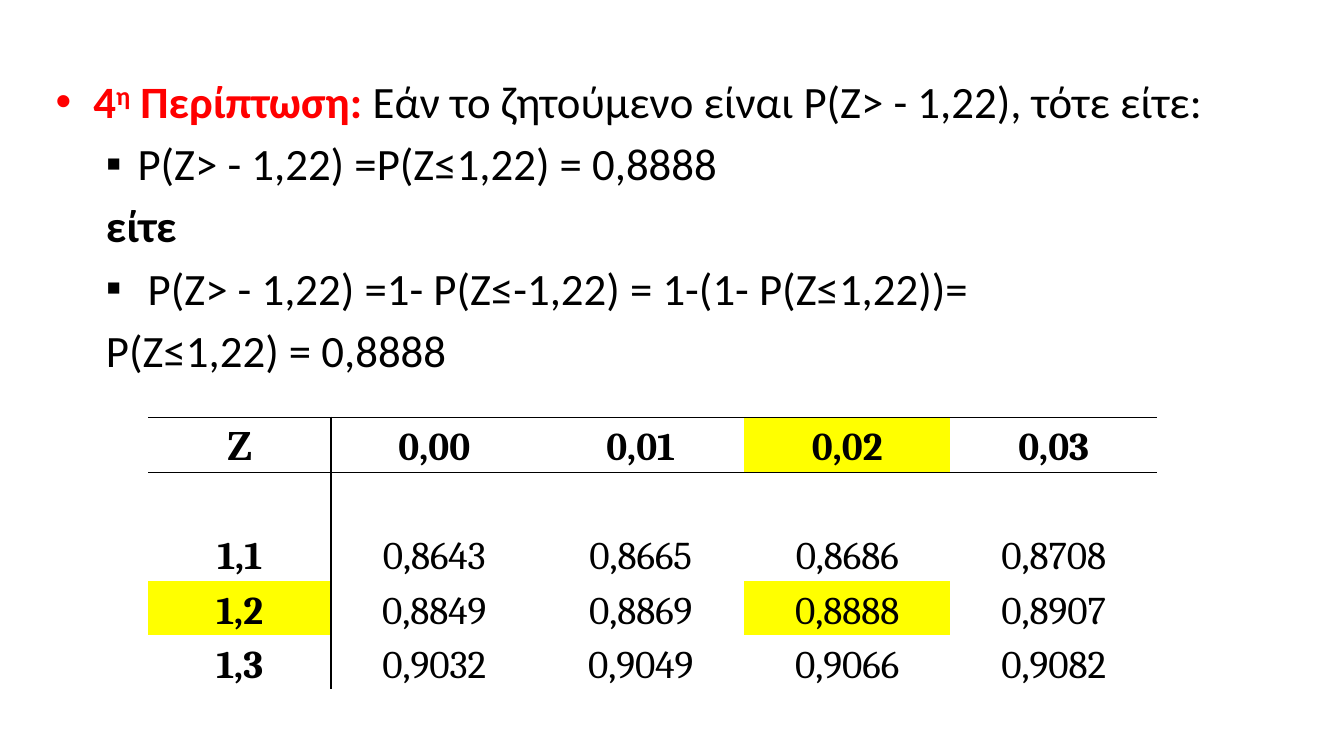
from pptx import Presentation
from pptx.dml.color import RGBColor
from pptx.enum.text import MSO_ANCHOR, MSO_AUTO_SIZE, PP_ALIGN
from pptx.oxml.ns import qn
from pptx.util import Pt
from lxml.etree import SubElement

BLACK, RED, YELLOW = "000000", "FF0000", "FFFF00"
HEAD = dict(color=RED, bold=True)

LINES = [
    (27, -27, "•", [("4", HEAD), ("η", dict(HEAD, rise=30000)),
                    (" Περίπτωση: ", HEAD),
                    ("Εάν το ζητούμενο είναι P(Z> - 1,22), τότε είτε:", {})]),
    (58.5, -22.5, "▪", [("P(Z> - 1,22) =P(Z≤1,22) = 0,8888", {})]),
    (36, 0, None, [("είτε", dict(bold=True))]),
    (58.5, -22.5, "▪",
     [(" P(Z> - 1,22) =1- P(Z≤-1,22) = 1-(1- P(Z≤1,22))=", {})]),
    (58.5, -22.5, None, [("P(Z≤1,22) = 0,8888", {})]),
]
ROWS = [
    ["Ζ", "0,00", "0,01", "0,02", "0,03"],
    ["", "", "", "", ""],
    ["1,1", "0,8643", "0,8665", "0,8686", "0,8708"],
    ["1,2", "0,8849", "0,8869", "0,8888", "0,8907"],
    ["1,3", "0,9032", "0,9049", "0,9066", "0,9082"],
]
MARKED = {(0, 3), (3, 0), (3, 3)}
WIDTHS = [130.5] + [147.5] * 4
HEIGHTS = [39.5] + [38.75] * 4


def paint(fill, color):
    fill.solid()
    fill.fore_color.rgb = RGBColor.from_string(color)


def write(para, text, font="Calibri", size=32, color=BLACK, bold=False, rise=0):
    run = para.add_run()
    run.text = text
    run.font.name, run.font.size, run.font.bold = font, Pt(size), bold
    paint(run.font.fill, color)
    if rise:
        run.font._element.set("baseline", str(rise))


def indent(para, left, first, mark):
    para.space_before = Pt(6)
    props = para._p.get_or_add_pPr()
    props.set("marL", str(Pt(left)))
    props.set("indent", str(Pt(first)))
    if mark:
        SubElement(props, qn("a:buFont"), typeface="Arial")
        SubElement(props, qn("a:buChar"), char=mark)
    else:
        SubElement(props, qn("a:buNone"))


def border(cell, sides):
    props = cell._tc.get_or_add_tcPr()
    for side in "LRTB":
        line = SubElement(props, qn("a:ln" + side), w=str(Pt(1)))
        if side in sides:
            fill = SubElement(line, qn("a:solidFill"))
            SubElement(fill, qn("a:srgbClr"), val=BLACK)
        else:
            SubElement(line, qn("a:noFill"))


def add_body(slide):
    title = slide.shapes.title
    title._element.getparent().remove(title._element)
    body = slide.placeholders[1]
    body.left, body.top = Pt(32.5), Pt(49)
    body.width, body.height = Pt(890), Pt(471)
    frame = body.text_frame
    frame.auto_size = MSO_AUTO_SIZE.NONE
    for i, (left, first, mark, runs) in enumerate(LINES):
        para = frame.add_paragraph() if i else frame.paragraphs[0]
        para.level = min(i, 1)
        indent(para, left, first, mark)
        for text, style in runs:
            write(para, text, **style)


def add_grid(slide):
    grid = slide.shapes.add_table(
        len(ROWS), len(WIDTHS), Pt(106), Pt(298),
        Pt(sum(WIDTHS)), Pt(sum(HEIGHTS))).table
    grid.first_row = grid.horz_banding = False
    for col, width in zip(grid.columns, WIDTHS):
        col.width = Pt(width)
    for r, (row, height) in enumerate(zip(ROWS, HEIGHTS)):
        grid.rows[r].height = Pt(height)
        for c, text in enumerate(row):
            cell = grid.cell(r, c)
            sides = {0: "TB", 1: "T"}.get(r, "") + {0: "R", 1: "L"}.get(c, "")
            border(cell, sides)
            if (r, c) in MARKED:
                paint(cell.fill, YELLOW)
            else:
                cell.fill.background()
            cell.vertical_anchor = MSO_ANCHOR.MIDDLE
            cell.margin_left = cell.margin_right = Pt(0.7)
            cell.margin_top = cell.margin_bottom = Pt(0)
            para = cell.text_frame.paragraphs[0]
            para.alignment = PP_ALIGN.CENTER
            if text:
                para.line_spacing = 1.15
                write(para, text, font="Cambria", size=28, bold=r == 0 or c == 0)


def main():
    deck = Presentation()
    deck.slide_width, deck.slide_height = Pt(960), Pt(540)
    slide = deck.slides.add_slide(deck.slide_layouts[1])
    add_body(slide)
    add_grid(slide)
    deck.save("out.pptx")


if __name__ == "__main__":
    main()
